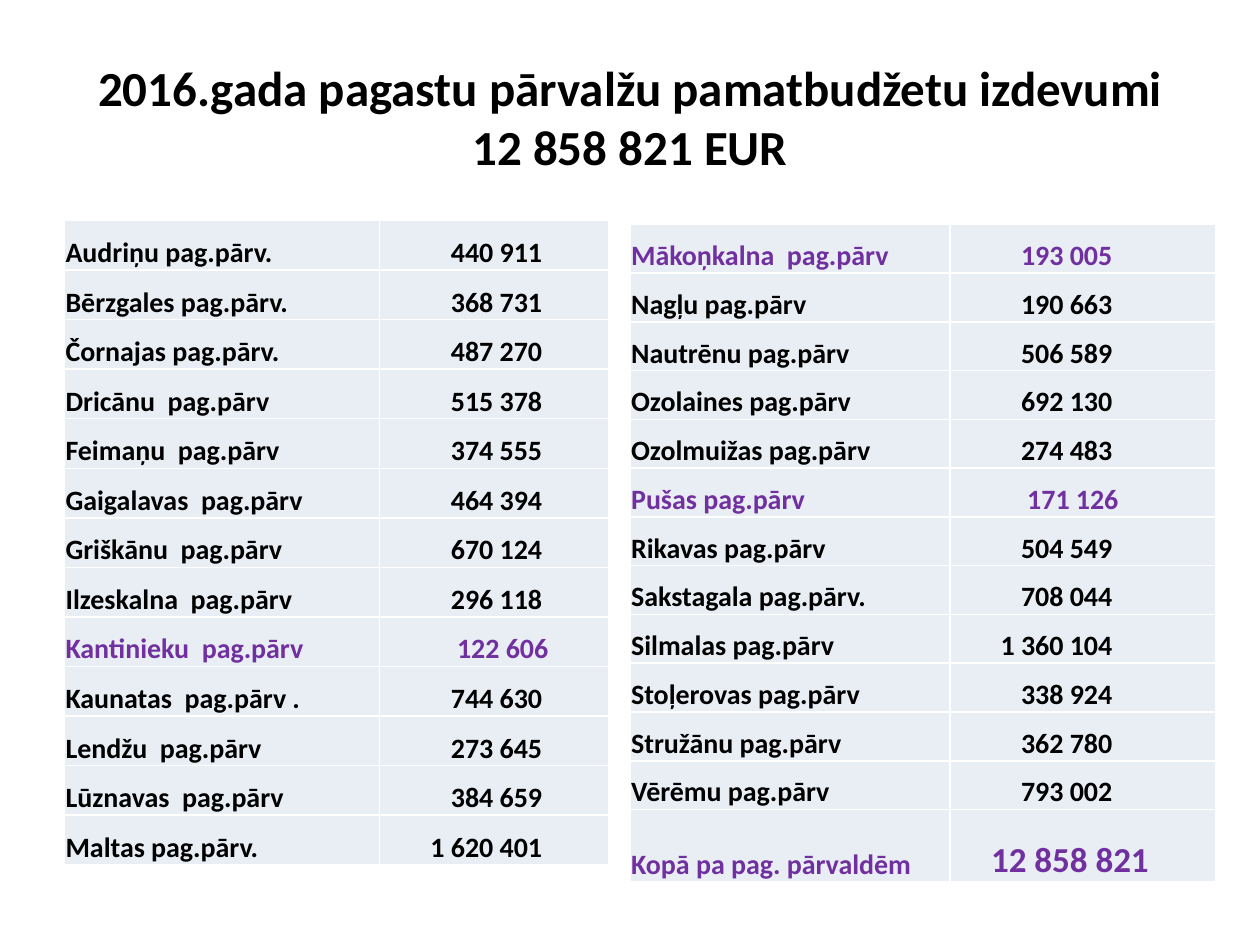
import pptx
import pptx.dml.color
import pptx.enum.text
import pptx.oxml
import pptx.oxml.ns
import pptx.util

Pt = pptx.util.Pt
RGB = pptx.dml.color.RGBColor.from_string
ALIGN = pptx.enum.text.PP_ALIGN
ANCHOR = pptx.enum.text.MSO_ANCHOR

THEME = {
    "font": "Calibri", "text": "000000", "accent": "7030A0",
    "cell": "E9EDF4", "border": "FFFFFF",
    "title_size": 28, "cell_size": 16, "total_size": 20,
}

TITLE = "2016.gada pagastu pārvalžu pamatbudžetu izdevumi 12 858 821 EUR"
TOTAL = "Kopā pa pag. pārvaldēm"
HIGHLIGHTED = {"Kantinieku  pag.pārv", "Mākoņkalna  pag.pārv", "Pušas pag.pārv", TOTAL}
# Distance in points by which a value stands further right than its column
OUTDENT = {"Kantinieku  pag.pārv": 3.5, "Pušas pag.pārv": 3.5, TOTAL: 21}

LEFT_ROWS = [
    ("Audriņu pag.pārv.", "440 911"),
    ("Bērzgales pag.pārv.", "368 731"),
    ("Čornajas pag.pārv.", "487 270"),
    ("Dricānu  pag.pārv", "515 378"),
    ("Feimaņu  pag.pārv", "374 555"),
    ("Gaigalavas  pag.pārv", "464 394"),
    ("Griškānu  pag.pārv", "670 124"),
    ("Ilzeskalna  pag.pārv", "296 118"),
    ("Kantinieku  pag.pārv", "122 606"),
    ("Kaunatas  pag.pārv .", "744 630"),
    ("Lendžu  pag.pārv", "273 645"),
    ("Lūznavas  pag.pārv", "384 659"),
    ("Maltas pag.pārv.", "1 620 401"),
]
RIGHT_ROWS = [
    ("Mākoņkalna  pag.pārv", "193 005"),
    ("Nagļu pag.pārv", "190 663"),
    ("Nautrēnu pag.pārv", "506 589"),
    ("Ozolaines pag.pārv", "692 130"),
    ("Ozolmuižas pag.pārv", "274 483"),
    ("Pušas pag.pārv", "171 126"),
    ("Rikavas pag.pārv", "504 549"),
    ("Sakstagala pag.pārv.", "708 044"),
    ("Silmalas pag.pārv", "1 360 104"),
    ("Stoļerovas pag.pārv", "338 924"),
    ("Stružānu pag.pārv", "362 780"),
    ("Vērēmu pag.pārv", "793 002"),
    (TOTAL, "12 858 821"),
]
TABLES = [
    {"rows": LEFT_ROWS, "left": 36.8, "top": 126, "widths": (180, 131),
     "row_height": 28.33, "value_inset": 38},
    {"rows": RIGHT_ROWS, "left": 360, "top": 128.2, "widths": (182.9, 151.7),
     "row_height": 27.87, "value_inset": 59},
]
TOTAL_HEIGHT = 41.5


def format_text(p, size, color, align):
    p.alignment = align
    for r in p.runs:
        r.font.name = THEME["font"]
        r.font.size = Pt(size)
        r.font.bold = True
        r.font.color.rgb = RGB(color)


def add_borders(cell):
    tc_pr = cell._tc.get_or_add_tcPr()
    for side in ("lnL", "lnR", "lnT", "lnB"):
        tc_pr.append(pptx.oxml.parse_xml(
            f'<a:{side} {pptx.oxml.ns.nsdecls("a")} w="{Pt(1)}"><a:solidFill>'
            f'<a:srgbClr val="{THEME["border"]}"/></a:solidFill></a:{side}>'))


def fill_cell(cell, text, size, color, align, right_inset):
    cell.margin_left = cell.margin_top = Pt(0.7)
    cell.margin_right, cell.margin_bottom = Pt(right_inset), Pt(0)
    cell.vertical_anchor = ANCHOR.BOTTOM
    add_borders(cell)
    cell.fill.solid()
    cell.fill.fore_color.rgb = RGB(THEME["cell"])
    cell.text_frame.text = text
    format_text(cell.text_frame.paragraphs[0], size, color, align)


def add_budget_table(slide, rows, left, top, widths, row_height, value_inset):
    heights = [TOTAL_HEIGHT if name == TOTAL else row_height for name, _ in rows]
    table = slide.shapes.add_table(
        len(rows), 2, Pt(left), Pt(top), Pt(sum(widths)), Pt(sum(heights))).table
    table.first_row = table.horz_banding = False
    for column, width in zip(table.columns, widths):
        column.width = Pt(width)
    for i, (name, value) in enumerate(rows):
        table.rows[i].height = Pt(heights[i])
        color = THEME["accent" if name in HIGHLIGHTED else "text"]
        value_size = THEME["total_size" if name == TOTAL else "cell_size"]
        inset = value_inset - OUTDENT.get(name, 0)
        fill_cell(table.cell(i, 0), name, THEME["cell_size"], color, ALIGN.LEFT, 0.7)
        fill_cell(table.cell(i, 1), value, value_size, color, ALIGN.RIGHT, inset)


def add_title(slide):
    tf = slide.shapes.add_textbox(Pt(36), Pt(21.6), Pt(648), Pt(90)).text_frame
    tf.word_wrap = True
    tf.vertical_anchor = ANCHOR.MIDDLE
    tf.text = TITLE
    format_text(tf.paragraphs[0], THEME["title_size"], THEME["text"], ALIGN.CENTER)


def main():
    prs = pptx.Presentation()
    prs.slide_width, prs.slide_height = Pt(720), Pt(540)
    slide = prs.slides.add_slide(prs.slide_layouts[6])
    for spec_of_table in TABLES:
        add_budget_table(slide, **spec_of_table)
    add_title(slide)
    prs.save("out.pptx")


if __name__ == "__main__":
    main()
